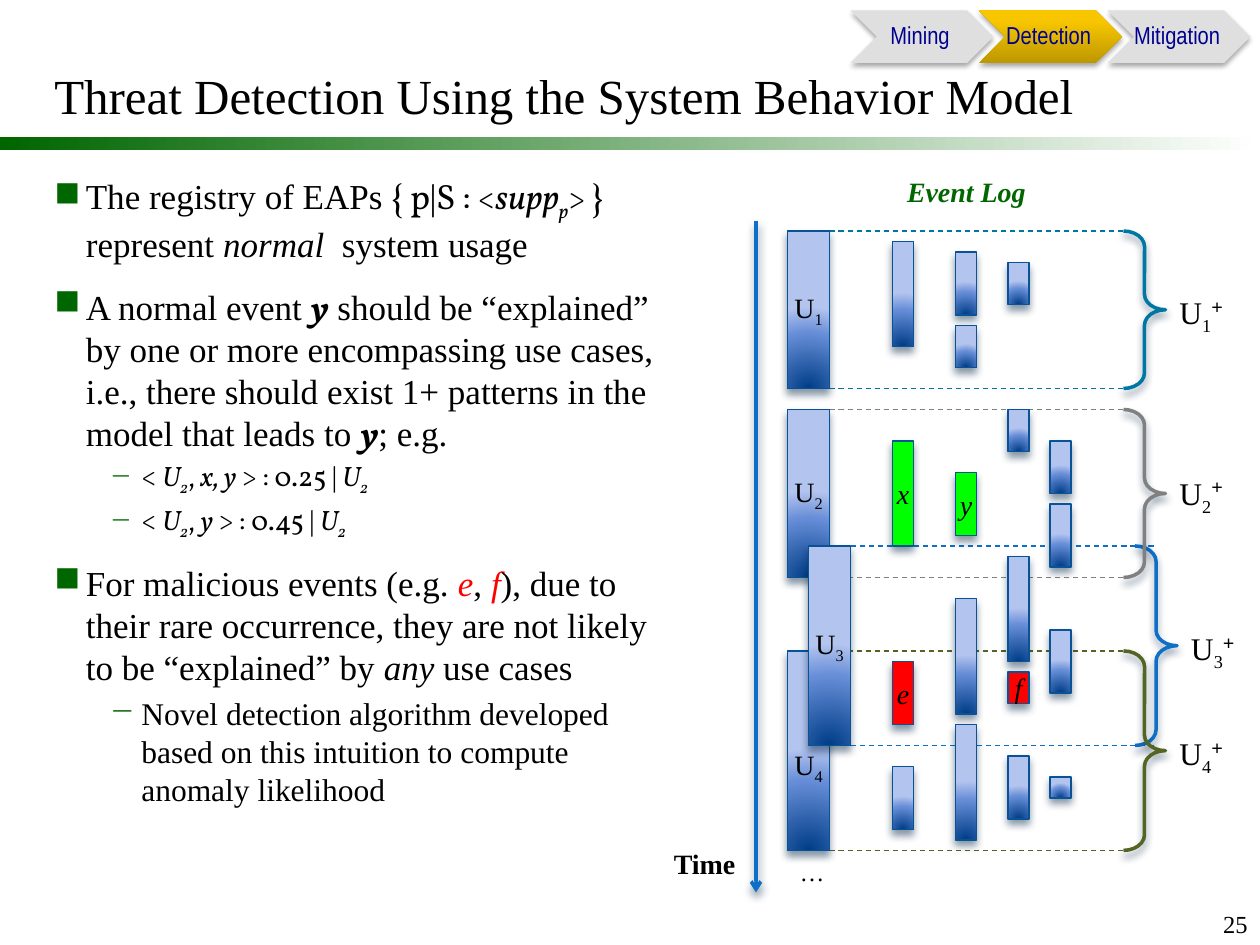
from dataclasses import dataclass
from functools import partial

from lxml.etree import SubElement
from pptx import Presentation
from pptx.dml.color import RGBColor
from pptx.enum.dml import MSO_LINE
from pptx.enum.shapes import MSO_CONNECTOR, MSO_SHAPE as Shape
from pptx.enum.text import MSO_ANCHOR as Anchor, PP_ALIGN as Align
from pptx.oxml import parse_xml
from pptx.oxml.ns import nsdecls, qn
from pptx.util import Inches, Pt

GREEN, BLUE, EDGE = "006600", "0F6FC6", "095295"
DEPTH = ("042747", 48, 4.5, 3)
SOFT = ("000000", 35, 3.1, 1.8)
BAR_STOPS = [(0, "003D87"), (68, "668DD7"), (100, "B3C4EF")]
GLOW = ('<a:path path="circle"><a:fillToRect l="50000" t="130000" '
        'r="50000" b="-30000"/></a:path>')


@dataclass
class Run:
    text: str
    size: float = 20
    font: str = "Times New Roman"
    color: str = "000000"
    bold: bool = False
    italic: bool = False
    base: int = 0


Math = partial(Run, font="Vollkorn")


def rgb(value):
    return RGBColor.from_string(value)


def linear(degrees):
    return f'<a:lin ang="{degrees * 60000}" scaled="0"/>'


def user(number, size):
    return [Run("U", size), Run(str(number), size, base=-25)]


def pattern(events, support):
    small = partial(Math, size=16)
    case = [small("U", italic=True), small("2", italic=True, base=-25)]
    return [small("< "), *case, small(", "), small(events, italic=True),
            small(f"> : {support} | "), *case]


class Board:
    columns, rows = 120, 90

    def __init__(self, deck):
        self.slide = deck.slides.add_slide(deck.slide_layouts[6])
        self.column = deck.slide_width / self.columns
        self.row = deck.slide_height / self.rows

    def place(self, left, top, width, height):
        return (round(left * self.column), round(top * self.row),
                round(width * self.column), round(height * self.row))

    def shade(self, element, color, alpha, blur, distance):
        effects = SubElement(element.spPr, qn("a:effectLst"))
        shadow = SubElement(effects, qn("a:outerShdw"), blurRad=str(Pt(blur)),
                            dist=str(Pt(distance)), dir="5400000", rotWithShape="0")
        tint = SubElement(shadow, qn("a:srgbClr"), val=color)
        SubElement(tint, qn("a:alpha"), val=str(alpha * 1000))

    def gradient(self, shape, stops, direction):
        shape.fill.background()
        marks = "".join(f'<a:gs pos="{at * 1000}"><a:srgbClr val="{color}"/></a:gs>'
                        for at, color in stops)
        properties = shape._element.spPr
        properties.replace(properties.find(qn("a:noFill")), parse_xml(
            f'<a:gradFill {nsdecls("a")} rotWithShape="1"><a:gsLst>{marks}</a:gsLst>'
            f'{direction}</a:gradFill>'))

    def shape(self, kind, box, fill=None, direction=None, line=None, width=0.75, shadow=None):
        shape = self.slide.shapes.add_shape(kind, *self.place(*box))
        if direction:
            self.gradient(shape, fill, direction)
        elif fill:
            shape.fill.solid()
            shape.fill.fore_color.rgb = rgb(fill)
        else:
            shape.fill.background()
        if line:
            shape.line.color.rgb = rgb(line)
            shape.line.width = Pt(width)
        else:
            shape.line.fill.background()
        if shadow:
            self.shade(shape._element, *shadow)
        else:
            shape.shadow.inherit = False
        return shape

    def bar(self, box, runs=(), fill=None, drop=0):
        bar = self.shape(Shape.RECTANGLE, box, fill or BAR_STOPS,
                         None if fill else GLOW, EDGE, shadow=DEPTH)
        if runs:
            self.frame(bar, Anchor.MIDDLE, (0, 0.05 + drop, 0, 0.05))
            self.add_runs(bar.text_frame.paragraphs[0], runs, Align.CENTER)

    def line(self, start, end, color, width=0.75, arrow=False):
        ends = self.place(*start, *end)
        line = self.slide.shapes.add_connector(MSO_CONNECTOR.STRAIGHT, *ends)
        line.line.color.rgb = rgb(color)
        line.line.width = Pt(width)
        if arrow:
            SubElement(line._element.spPr.find(qn("a:ln")), qn("a:tailEnd"), type="arrow")
            self.shade(line._element, *DEPTH)
        else:
            line.line.dash_style = MSO_LINE.DASH
            SubElement(line._element.spPr, qn("a:effectLst"))

    def frame(self, shape, anchor, margins, wrap=True):
        frame = shape.text_frame
        frame.word_wrap = wrap
        frame.vertical_anchor = anchor
        (frame.margin_left, frame.margin_top,
         frame.margin_right, frame.margin_bottom) = map(Inches, margins)
        return frame

    def text(self, box, runs=(), align=Align.LEFT, anchor=Anchor.TOP,
             margins=(0.1, 0.05, 0.1, 0.05), wrap=True, spacing=None):
        label = self.slide.shapes.add_textbox(*self.place(*box))
        frame = self.frame(label, anchor, margins, wrap)
        self.add_runs(frame.paragraphs[0], runs, align, spacing)
        return frame

    def add_runs(self, paragraph, runs, align=Align.LEFT, spacing=None):
        paragraph.alignment = align
        if spacing:
            paragraph.line_spacing = spacing
        for item in runs:
            run = paragraph.add_run()
            run.text = item.text
            font = run.font
            font.size, font.name = Pt(item.size), item.font
            font.bold, font.italic = item.bold, item.italic
            font.color.rgb = rgb(item.color)
            if item.base:
                run._r.get_or_add_rPr().set("baseline", str(item.base * 1000))

    def bullets(self, box, points):
        frame = self.text(box)
        for index, (level, before, runs) in enumerate(points):
            paragraph = frame.add_paragraph() if index else frame.paragraphs[0]
            paragraph.level = level
            paragraph.space_before = Pt(before)
            self.add_runs(paragraph, runs)
            properties = paragraph._p.get_or_add_pPr()
            properties.set("marL", str(Inches((0.25, 0.69)[level])))
            properties.set("indent", str(Inches(-0.25)))
            tint = SubElement(properties, qn("a:buClr"))
            SubElement(tint, qn("a:srgbClr"), val=GREEN)
            SubElement(properties, qn("a:buChar"), char="■−"[level])


POINTS = [
    (0, 4, [Run("The registry of EAPs "), Math("{ p|S : "), Math("<", 18),
            Math("supp", italic=True), Math("p", italic=True, base=-25), Math("> ", 18),
            Math("} "), Run("represent "), Run("normal", italic=True), Run("  system usage")]),
    (0, 12, [Run("A normal event "), Math("y", bold=True, italic=True),
             Run(" should be “explained” by one or more encompassing use cases, i.e., "
                 "there should exist 1+ patterns in the model that leads to "),
             Math("y", bold=True, italic=True), Run("; e.g.")]),
    (1, 3.2, pattern("x, y ", "0.25")),
    (1, 3.2, pattern("y ", "0.45")),
    (0, 12, [Run("For malicious events (e.g. "), Run("e", color="FF0000", italic=True),
             Run(", "), Run("f", color="FF0000", italic=True),
             Run("), due to their rare occurrence, they are not likely to be “explained” by "),
             Run("any ", italic=True), Run("use cases")]),
    (1, 3.6, [Run("Novel detection algorithm developed based on this intuition "
                  "to compute anomaly likelihood", 18)]),
]
USERS = [(1, 75, 22, 15, 107, 27, "0076A3"), (2, 75, 39, 16, 107, 44.2, "808080"),
         (4, 75, 62, 19, 107, 69, "546422"), (3, 77, 52, 19, 108.1, 59, BLUE)]
EVENTS = {85: [(23, 10), (73, 6)],
          91: [(24, 6), (31, 4), (57, 11), (69, 11)],
          96: [(25, 4), (39, 4), (53, 10), (72, 6)],
          100: [(42, 5), (48, 6), (60, 6), (74, 2)]}
NAMED_EVENTS = [("x", 85, 42, 10, "00FF00"), ("y", 91, 45, 6, "00FF00"),
                ("e", 85, 63, 6, "FF0000"), ("f", 96, 64, 3, "FF0000")]
GOLD = [(0, "BE9800"), (80, "F7C600"), (100, "F8C700")]
STAGES = [("Mining", "DFDFDF", None), ("Detection", GOLD, linear(270)),
          ("Mitigation", "DFDFDF", None)]


def main():
    deck = Presentation()
    deck.slide_width, deck.slide_height = Inches(10), Inches(7.5)
    board = Board(deck)
    board.shape(Shape.RECTANGLE, (0, 13, 120, 1.3), [(0, GREEN), (100, "FFFFFF")], linear(0))
    board.text((4, 5, 113, 8), [Run("Threat Detection Using the System Behavior Model", 28)],
               anchor=Anchor.MIDDLE)
    board.bullets((4, 16, 60, 69), POINTS)

    for number, left, top, height, brace, _, color in USERS:
        for edge in (top, top + height):
            board.line((left + 4, edge), (brace + 1.9 if number == 3 else brace, edge), color)
        board.bar((left, top, 4, height), user(number, 16), drop=0.25 if number == 4 else 0)
    for left, spans in EVENTS.items():
        for top, height in spans:
            board.bar((left, top, 2, height))
    for name, left, top, height, color in NAMED_EVENTS:
        board.bar((left, top, 2, height), [Run(name, 16, italic=True)], color)
    for number, _, top, height, brace, label_top, color in reversed(USERS):
        curve = board.shape(Shape.RIGHT_BRACE, (brace, top, 4, height),
                            line=color, width=2, shadow=DEPTH)
        curve.adjustments[0] = 0.37
        board.text((brace + 4, label_top, 6.8, 4.8),
                   user(number, 18) + [Run("+", 20, bold=True, base=30)],
                   Align.CENTER, wrap=False)

    board.line((72, 21), (72, 85), BLUE, 2, arrow=True)
    board.text((63, 80, 8.4, 4.4), [Run("Time", 16, bold=True)], wrap=False)
    board.text((75, 81, 4.8, 4.1), [Run("…", 14)], wrap=False)
    board.text((85.2, 16, 14.8, 4.4),
               [Run("Event Log", 16, color=GREEN, bold=True, italic=True)], wrap=False)

    for index, (stage, fill, direction) in enumerate(STAGES):
        left = 81 + 12.24 * index
        board.shape(Shape.CHEVRON, (left, 1, 13.6, 5), fill, direction, shadow=SOFT)
        board.text((left + 2.5, 1, 8.5, 5), [Run(stage, 14, "Arial Narrow", "000090")],
                   Align.CENTER, Anchor.MIDDLE, (0, 0.02, 0.02, 0.02), spacing=0.9)
    board.text((110, 84, 10, 6), [Run("25", 14)], Align.RIGHT, Anchor.BOTTOM)
    deck.save("out.pptx")


if __name__ == "__main__":
    main()
